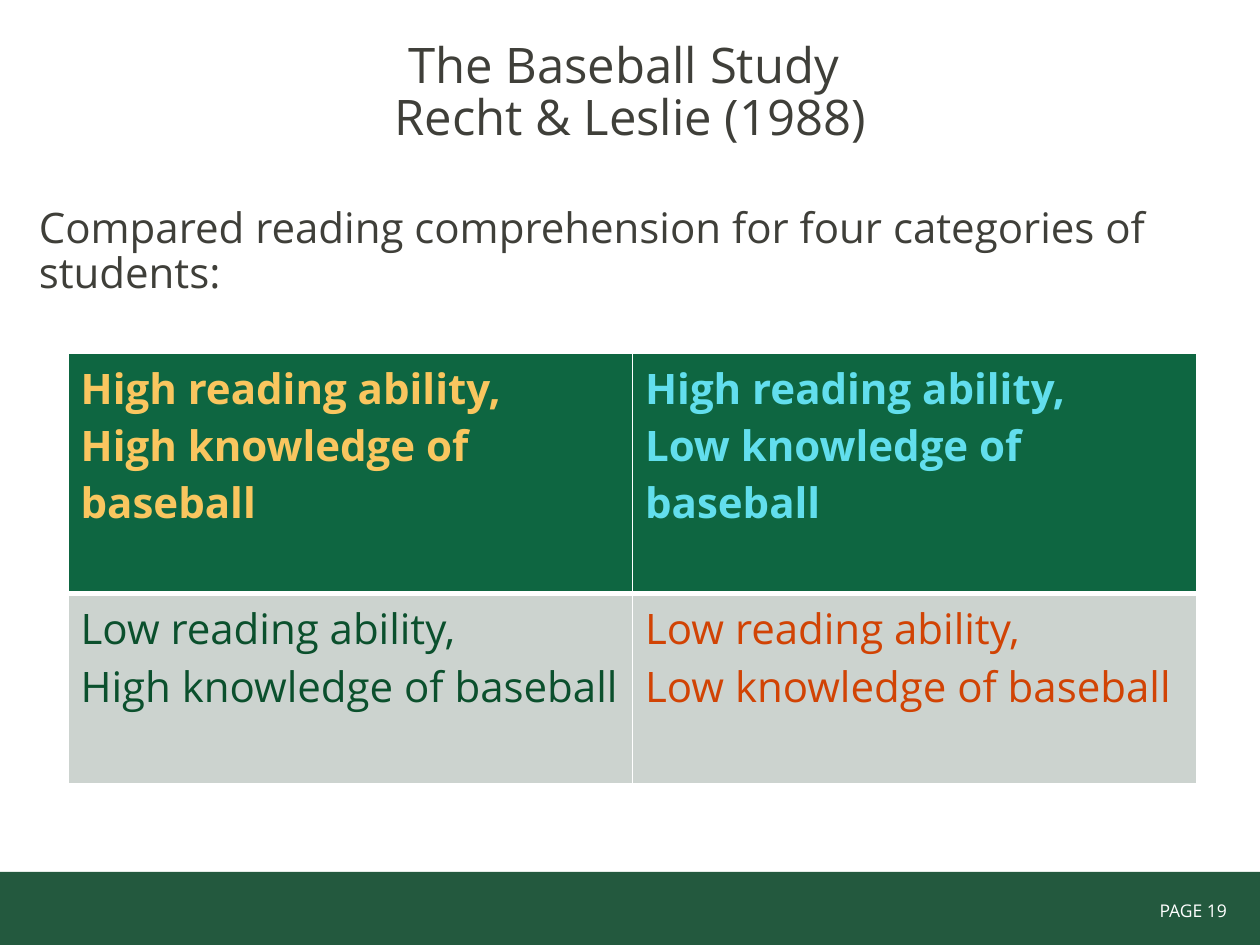
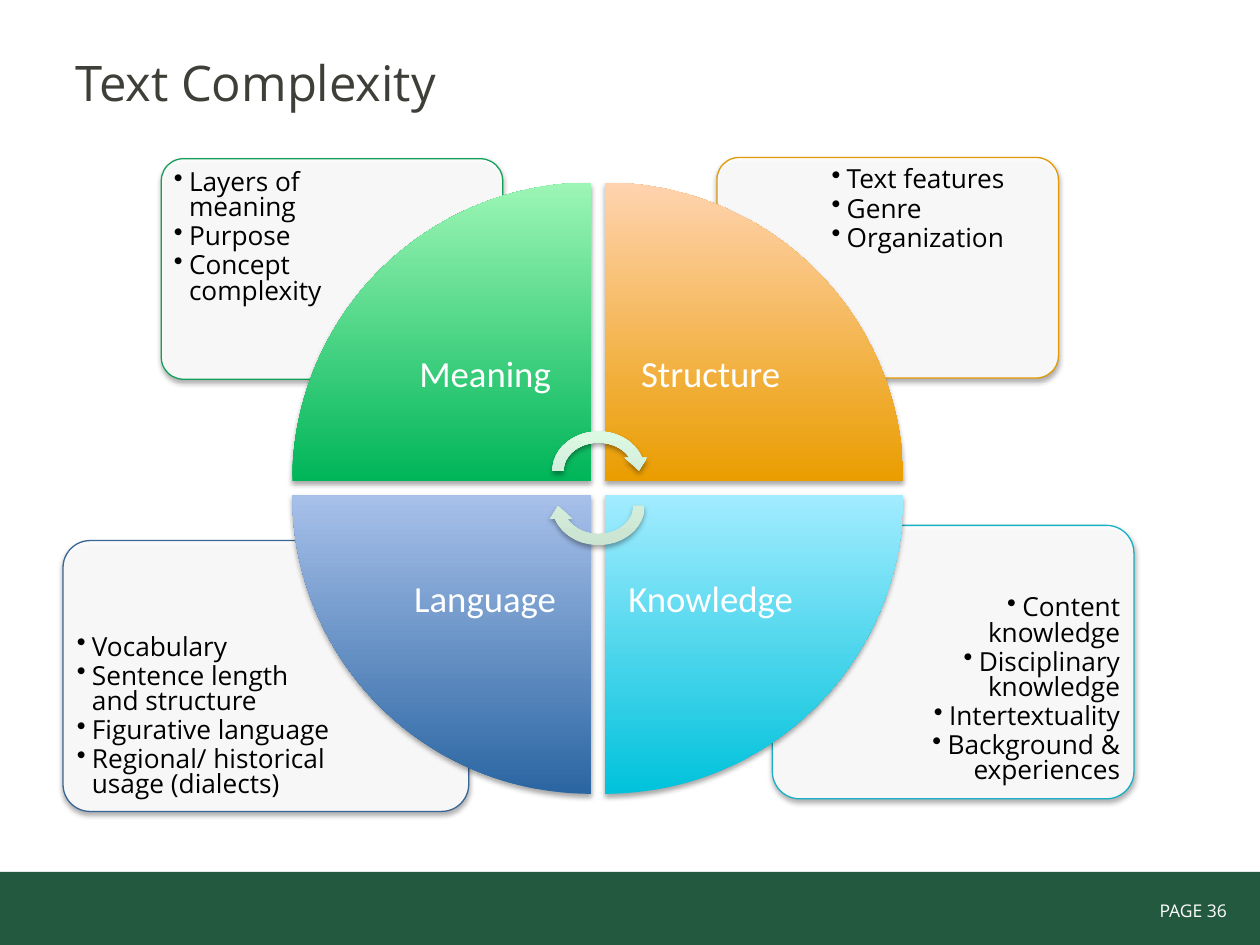
from dataclasses import dataclass

from lxml.etree import SubElement
from pptx import Presentation
from pptx.dml.color import RGBColor
from pptx.enum.shapes import MSO_SHAPE
from pptx.enum.text import MSO_ANCHOR, PP_ALIGN
from pptx.oxml import parse_xml
from pptx.oxml.ns import nsdecls, qn
from pptx.util import Inches, Pt


@dataclass(frozen=True)
class Theme:
    font: str = "Open Sans"
    label_font: str = "Calibri"
    white: str = "FFFFFF"
    black: str = "000000"
    ink: str = "3F3F39"
    band: str = "23593E"
    header_fill: str = "0E6641"
    row_fill: str = "CCD3CF"
    gold: str = "F9C65F"
    aqua: str = "62DEED"
    forest: str = "0B502D"
    rust: str = "D14304"
    arrow: tuple = ("CAE2D0", "DDFAE5")
    title_size: int = 28
    body_size: int = 24
    label_size: int = 21
    list_size: int = 15
    footer_size: int = 10
    text_spacing: float = 0.89
    list_spacing: float = 0.8


def write(para, text, size, color, font=Theme.font, bold=False, align=PP_ALIGN.LEFT,
          spacing=None, after=0, bullet=False):
    if bullet:
        properties = para._p.get_or_add_pPr()
        properties.set("marL", str(Inches(0.12)))
        properties.set("indent", str(Inches(-0.12)))
        SubElement(properties, qn("a:buChar")).set("char", "•")
    para.alignment = align
    para.space_after = Pt(after)
    if spacing:
        para.line_spacing = spacing
    for index, line in enumerate(text.split("\n")):
        if index:
            para.add_line_break()
        span = para.add_run()
        span.text = line
        span.font.name = font
        span.font.size = Pt(size)
        span.font.bold = bold
        span.font.color.rgb = RGBColor.from_string(color)


class Slides:
    def __init__(self, theme):
        self.theme = theme
        self.deck = Presentation()
        self.deck.slide_width, self.deck.slide_height = Inches(10), Inches(7.5)
        self.page = None

    def start(self, title, number, top, align=PP_ALIGN.LEFT):
        theme = self.theme
        self.page = self.deck.slides.add_slide(self.deck.slide_layouts[6])
        self.shape(MSO_SHAPE.RECTANGLE, (0, 6.92, 10, 0.58), theme.band)
        self.text((8.28, 7.09, 1.59, 0.27), [f"PAGE {number} "], size=theme.footer_size,
                  color=theme.white, align=PP_ALIGN.RIGHT)
        self.text((0.5, top, 9, 1.25), [title], anchor=MSO_ANCHOR.MIDDLE, size=theme.title_size,
                  color=theme.ink, align=align, spacing=theme.text_spacing)

    def text(self, place, lines, anchor=MSO_ANCHOR.TOP, inset=None, **style):
        box = self.page.shapes.add_textbox(*map(Inches, place))
        frame = box.text_frame
        frame.word_wrap = True
        frame.vertical_anchor = anchor
        if inset is not None:
            frame.margin_left = frame.margin_right = Inches(inset)
            frame.margin_top = frame.margin_bottom = Inches(inset)
        self.fill_frame(frame, lines, **style)

    def fill_frame(self, frame, lines, **style):
        for index, line in enumerate(lines):
            para = frame.add_paragraph() if index else frame.paragraphs[0]
            write(para, line, **style)

    def shape(self, kind, place, fill, line=None, rotation=0, shadow=False):
        shape = self.page.shapes.add_shape(kind, *map(Inches, place))
        shape.rotation = rotation
        if isinstance(fill, tuple):
            shape.fill.gradient()
            shape.fill.gradient_angle = 90
            for stop, color in zip(shape.fill.gradient_stops, fill):
                stop.color.rgb = RGBColor.from_string(color)
            shape.element.spPr.find(qn("a:gradFill")).set("rotWithShape", "0")
        else:
            shape.fill.solid()
            shape.fill.fore_color.rgb = RGBColor.from_string(fill)
        if line:
            shape.line.color.rgb = RGBColor.from_string(line)
            shape.line.width = Pt(0.75)
        else:
            shape.line.fill.background()
        shape.shadow.inherit = False
        if shadow:
            shape.element.spPr.find(qn("a:effectLst")).append(parse_xml(
                f'<a:outerShdw {nsdecls("a")} blurRad="{Pt(3.1)}" dist="{Pt(1.8)}" '
                f'dir="5400000" rotWithShape="0"><a:srgbClr val="{self.theme.black}">'
                '<a:alpha val="35000"/></a:srgbClr></a:outerShdw>'))
        return shape

    def card(self, place, line, text_place, items, align=PP_ALIGN.LEFT, anchor=MSO_ANCHOR.TOP):
        theme = self.theme
        card = self.shape(MSO_SHAPE.ROUNDED_RECTANGLE, place, theme.white, line, shadow=True)
        card.adjustments[0] = 0.1
        color = card.element.spPr.find(qn("a:solidFill"))[0]
        SubElement(color, qn("a:alpha")).set("val", "90000")
        self.text(text_place, items, anchor, 0.06, size=theme.list_size, color=theme.black,
                  align=align, spacing=theme.list_spacing, after=2.25, bullet=True)

    def table(self, place, heights, rows, fills):
        left, top, width = place
        frame = self.page.shapes.add_table(len(rows), len(rows[0]), Inches(left), Inches(top),
                                           Inches(width), Inches(sum(heights)))
        for r, (height, row, fill) in enumerate(zip(heights, rows, fills)):
            frame.table.rows[r].height = Inches(height)
            for c, (lines, color) in enumerate(row):
                cell = frame.table.cell(r, c)
                cell.fill.solid()
                cell.fill.fore_color.rgb = RGBColor.from_string(fill)
                self.fill_frame(cell.text_frame, lines, size=self.theme.body_size,
                                color=color, bold=r == 0)
                self.borders(cell, {"L": 1, "R": 1, "T": 3 if r else 1, "B": 1 if r else 3})

    def borders(self, cell, widths):
        properties = cell._tc.get_or_add_tcPr()
        for index, (side, width) in enumerate(widths.items()):
            properties.insert(index, parse_xml(
                f'<a:ln{side} {nsdecls("a")} w="{Pt(width)}"><a:solidFill>'
                f'<a:srgbClr val="{self.theme.white}"/></a:solidFill></a:ln{side}>'))


def baseball_study(slides):
    theme = slides.theme
    slides.start("The Baseball Study \nRecht & Leslie (1988)", 19, 0.12, PP_ALIGN.CENTER)
    slides.text((0.21, 1.6, 9, 0.95),
                ["Compared reading comprehension for four categories of students:"],
                size=theme.body_size, color=theme.ink, spacing=theme.text_spacing)
    colors = {"High": (theme.gold, theme.aqua), "Low": (theme.forest, theme.rust)}
    rows = [[([f"{ability} reading ability,", f"{knowledge} knowledge of baseball"], color)
             for knowledge, color in zip(("High", "Low"), row_colors)]
            for ability, row_colors in colors.items()]
    slides.table((0.54, 2.8, 8.96), (1.91, 1.51), rows, (theme.header_fill, theme.row_fill))


def text_complexity(slides):
    theme = slides.theme
    slides.start("Text Complexity", 36, 0.06)
    slides.card((6.13, 4.17, 2.87, 2.17), "16B1C5", (7.04, 4.76, 1.91, 1.53),
                ["Content knowledge", "Disciplinary knowledge", "Intertextuality",
                 "Background & experiences"], PP_ALIGN.RIGHT, MSO_ANCHOR.BOTTOM)
    slides.card((0.5, 4.29, 3.22, 2.15), "396694", (0.55, 4.88, 2.16, 1.52),
                ["Vocabulary", "Sentence length and structure", "Figurative language",
                 "Regional/ historical usage (dialects)"], anchor=MSO_ANCHOR.BOTTOM)
    slides.card((5.69, 1.25, 2.71, 1.75), "E29A08", (6.54, 1.28, 1.82, 1.24),
                ["Text features", "Genre", "Organization"])
    slides.card((1.28, 1.26, 2.71, 1.75), "15A059", (1.32, 1.3, 1.82, 1.24),
                ["Layers of meaning", "Purpose", "Concept complexity"])

    wedge, label, step = 2.37, 1.68, 2.48
    quadrants = [("Meaning", 0, 0, ("00B559", "9DF6B5")),
                 ("Structure", 1, 0, ("EA9D00", "FFD3AF")),
                 ("Knowledge", 1, 1, ("00C2DB", "A2ECFF")),
                 ("Language", 0, 1, ("2B66A2", "A7C0EA"))]
    for turn, (name, column, row, gradient) in enumerate(quadrants):
        left, top = 2.32 + column * step, 1.45 + row * step
        slides.shape(MSO_SHAPE.PIE_WEDGE, (left, top, wedge, wedge), gradient,
                     rotation=90 * turn, shadow=True)
        inner_left = left + (1 - column) * (wedge - label)
        inner_top = top + (1 - row) * (wedge - label)
        slides.text((inner_left, inner_top, label, label), [name], MSO_ANCHOR.MIDDLE, 0.16,
                    size=theme.label_size, color=theme.white, font=theme.label_font,
                    align=PP_ALIGN.CENTER, spacing=0.9)
    for top, rotation in ((3.38, 0), (3.66, 180)):
        slides.shape(MSO_SHAPE.CIRCULAR_ARROW, (4.34, top, 0.82, 0.71), theme.arrow,
                     rotation=rotation, shadow=True)


def main():
    slides = Slides(Theme())
    baseball_study(slides)
    text_complexity(slides)
    slides.deck.save("out.pptx")


if __name__ == "__main__":
    main()
